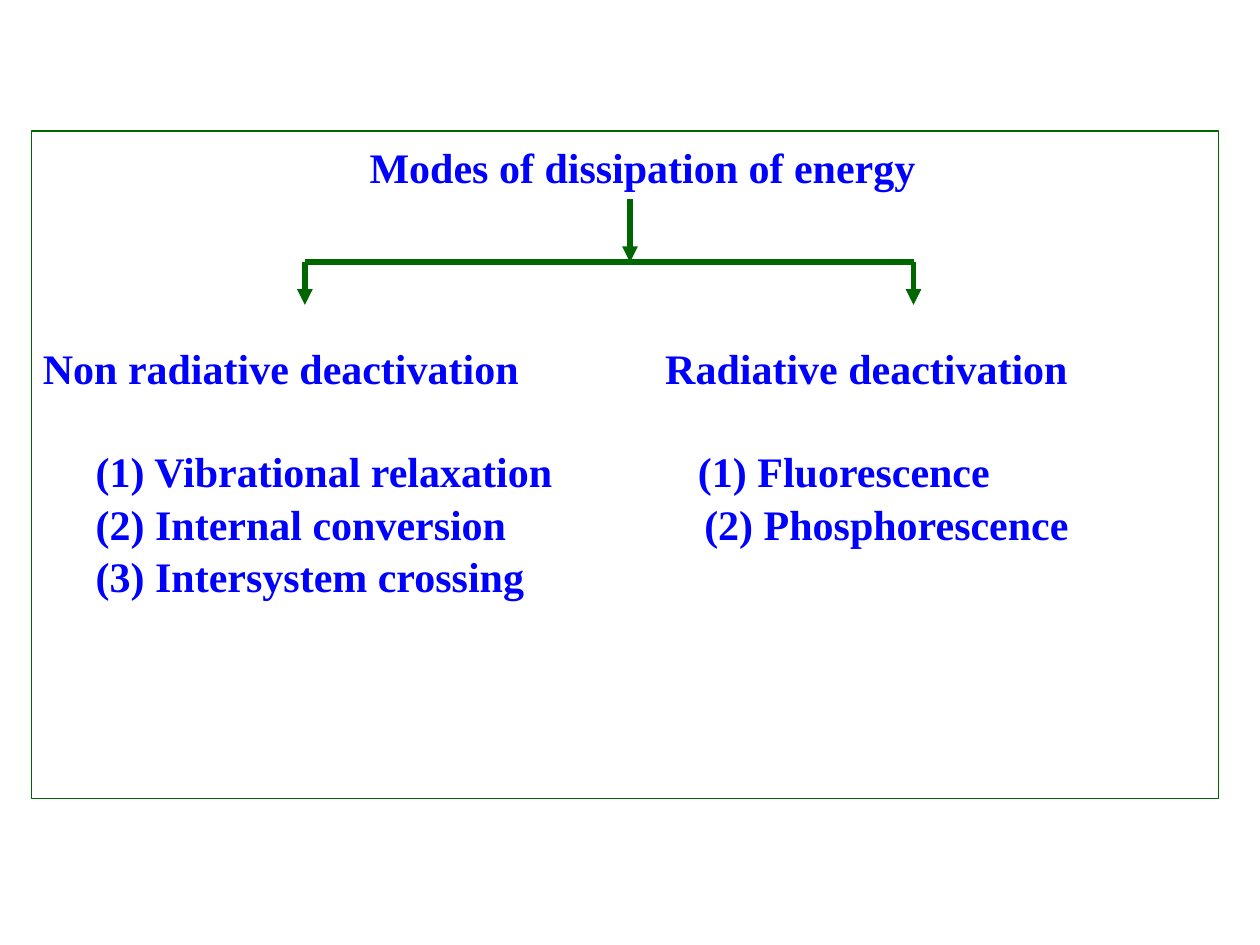
from dataclasses import dataclass
from lxml.etree import SubElement as Sub
from pptx import Presentation
from pptx.dml.color import RGBColor as RGB
from pptx.enum.shapes import MSO_CONNECTOR as Conn, MSO_SHAPE as Kind
from pptx.enum.text import MSO_ANCHOR as Anchor, MSO_AUTO_SIZE as Fit, PP_ALIGN as Align
from pptx.oxml.ns import qn
from pptx.util import Inches, Pt


@dataclass
class Theme:
    font: str = "Times New Roman"
    size: Pt = Pt(24)
    text: RGB = RGB(0x00, 0x00, 0xFF)
    line: RGB = RGB(0x00, 0x66, 0x00)
    thick: Pt = Pt(3)
    thin: Pt = Pt(0.75)


theme = Theme()


def set_text(shape, lines):
    frame = shape.text_frame
    frame.word_wrap = True
    frame.auto_size = Fit.NONE
    frame.vertical_anchor = Anchor.TOP
    frame.margin_left = frame.margin_right = 0
    frame.margin_top = frame.margin_bottom = 0
    frame.text = "\n".join(lines)
    for para in frame.paragraphs:
        para.alignment = Align.LEFT
        para.line_spacing = 1.0
        para.space_before = Pt(1.2)
        font = para.font
        font.name, font.size, font.bold = theme.font, theme.size, True
        font.color.rgb = theme.text
    return frame.paragraphs


def add_line(x1, y1, x2, y2, arrow=True):
    line = slide.shapes.add_connector(
        Conn.STRAIGHT, Inches(x1), Inches(y1), Inches(x2), Inches(y2))
    line.line.color.rgb = theme.line
    line.line.width = theme.thick
    if arrow:
        Sub(line.line._get_or_add_ln(), qn("a:tailEnd"), type="triangle")
    Sub(line._element.spPr, qn("a:effectLst"))


prs = Presentation()
prs.slide_width, prs.slide_height = Inches(10), Inches(7.5)
slide = prs.slides.add_slide(prs.slide_layouts[5])

box = slide.shapes.add_shape(
    Kind.RECTANGLE, Inches(0.25), Inches(1.04), Inches(9.42), Inches(5.3))
box.shadow.inherit = False
box.fill.background()
box.line.color.rgb = theme.line
box.line.width = theme.thin

title = slide.shapes.title
title.left, title.top = Inches(2.1), Inches(1.12)
title.width, title.height = Inches(6), Inches(0.4)
set_text(title, ["Modes of dissipation of energy"])[0].alignment = Align.CENTER

left, mid, right = 2.42, 5, 7.25
bar = 2.08
add_line(left, bar, right, bar, arrow=False)
add_line(mid, 1.58, mid, bar)
for x in (left, right):
    add_line(x, bar, x, 2.42)

modes = [
    (0.34, "Non radiative deactivation", [
        (0.42, "(1) Vibrational relaxation"),
        (0.42, "(2) Internal conversion"),
        (0.42, "(3) Intersystem crossing")]),
    (5.28, "Radiative deactivation", [
        (0.26, "(1) Fluorescence"),
        (0.31, "(2) Phosphorescence")]),
]
for x, head, items in modes:
    area = slide.shapes.add_textbox(
        Inches(x), Inches(2.72), Inches(4.3), Inches(2.1))
    paras = set_text(area, [head] + [name for _, name in items])
    for para, (dent, _) in zip(paras[1:], items):
        para._p.get_or_add_pPr().set("marL", str(Inches(dent)))
    paras[1].space_before = Pt(30)

prs.save("out.pptx")
